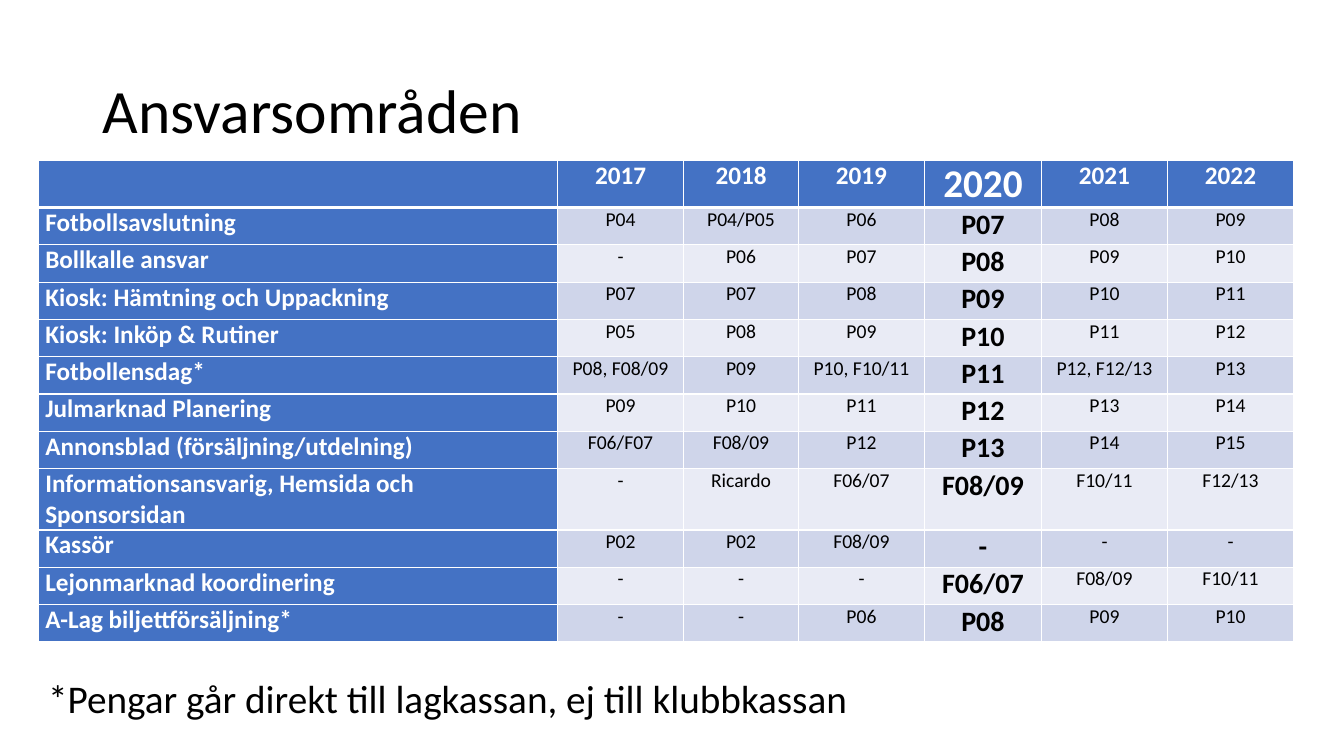
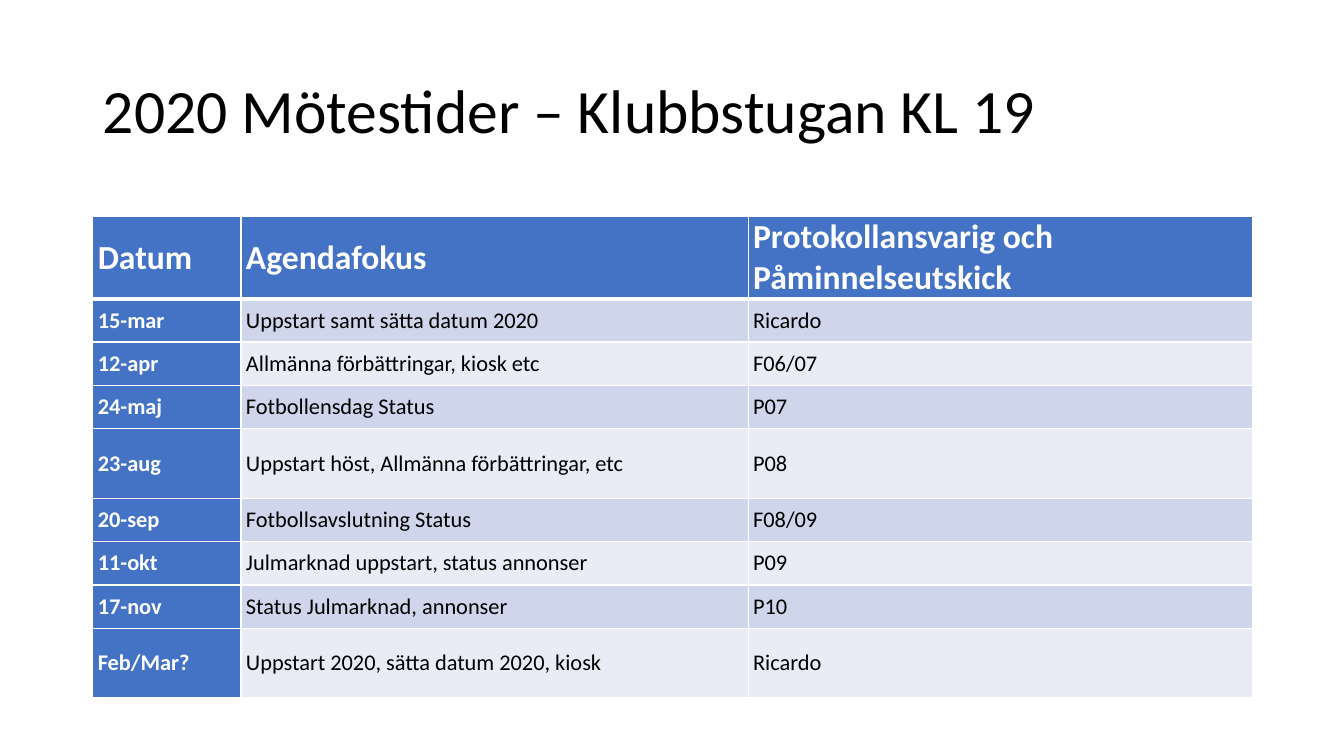
from dataclasses import dataclass

from lxml.etree import SubElement
from pptx import Presentation
from pptx.dml.color import RGBColor
from pptx.enum.text import MSO_ANCHOR, MSO_AUTO_SIZE, PP_ALIGN
from pptx.oxml.ns import qn
from pptx.util import Inches, Pt


@dataclass(frozen=True)
class Theme:
    font: str = "Calibri"
    text: str = "000000"
    inverse: str = "FFFFFF"
    accent: str = "4472C4"
    bands: tuple = ("CFD5EA", "E9EBF5")
    title_size: int = 44
    note_size: int = 28
    rule: float = 1
    header_rule: float = 3


@dataclass(frozen=True)
class TableStyle:
    header_size: int
    label_size: int
    body_size: int
    inset: float
    anchor: MSO_ANCHOR
    align: PP_ALIGN
    highlight_column: int = -1
    highlight_header_size: int = 28
    highlight_size: int = 20


THEME = Theme()

# Responsibilities per year
DUTIES_STYLE = TableStyle(18, 18, 14, 0.07, MSO_ANCHOR.TOP, PP_ALIGN.CENTER,
                          highlight_column=4)
DUTY_COLUMNS = [5.15, 1.25, 1.14, 1.25, 1.16, 1.25, 1.25]
DUTY_HEIGHTS = [0.47] + [0.37] * 7 + [0.61] + [0.37] * 3
DUTIES = [
    ["", "2017", "2018", "2019", "2020", "2021", "2022"],
    ["Fotbollsavslutning", "P04", "P04/P05", "P06", "P07", "P08", "P09"],
    ["Bollkalle ansvar", "-", "P06", "P07", "P08", "P09", "P10"],
    ["Kiosk: Hämtning och Uppackning", "P07", "P07", "P08", "P09", "P10", "P11"],
    ["Kiosk: Inköp & Rutiner", "P05", "P08", "P09", "P10", "P11", "P12"],
    ["Fotbollensdag*", "P08, F08/09", "P09", "P10, F10/11", "P11",
     "P12, F12/13", "P13"],
    ["Julmarknad Planering", "P09", "P10", "P11", "P12", "P13", "P14"],
    ["Annonsblad (försäljning/utdelning)", "F06/F07", "F08/09", "P12", "P13",
     "P14", "P15"],
    ["Informationsansvarig, Hemsida och Sponsorsidan", "-", "Ricardo",
     "F06/07", "F08/09", "F10/11", "F12/13"],
    ["Kassör", "P02", "P02", "F08/09", "-", "-", "-"],
    ["Lejonmarknad koordinering", "-", "-", "-", "F06/07", "F08/09", "F10/11"],
    ["A-Lag biljettförsäljning*", "-", "-", "P06", "P08", "P09", "P10"],
]

# Meeting schedule
MEETINGS_STYLE = TableStyle(24, 16, 16, 0.05, MSO_ANCHOR.MIDDLE, PP_ALIGN.LEFT)
MEETING_COLUMNS = [1.47, 5.03, 5]
MEETING_HEIGHTS = [0.81] + ([0.43] * 3 + [0.69]) * 2
MEETINGS = [
    ["Datum", "Agendafokus", "Protokollansvarig och Påminnelseutskick"],
    ["15-mar", "Uppstart samt sätta datum 2020", "Ricardo"],
    ["12-apr", "Allmänna förbättringar, kiosk etc", "F06/07"],
    ["24-maj", "Fotbollensdag Status", "P07"],
    ["23-aug", "Uppstart höst, Allmänna förbättringar, etc", "P08"],
    ["20-sep", "Fotbollsavslutning Status", "F08/09"],
    ["11-okt", "Julmarknad uppstart, status annonser", "P09"],
    ["17-nov", "Status Julmarknad, annonser", "P10"],
    ["Feb/Mar?", "Uppstart 2020, sätta datum 2020, kiosk", "Ricardo"],
]


def write(frame, text, *, size, color=THEME.text, bold=False,
          align=PP_ALIGN.LEFT, spacing=None):
    """Put one formatted paragraph in a text frame."""
    paragraph = frame.paragraphs[0]
    paragraph.alignment = align
    paragraph.line_spacing = spacing
    paragraph.font.size = Pt(size)
    if not text:
        return
    run = paragraph.add_run()
    run.text = text
    run.font.name = THEME.font
    run.font.size = Pt(size)
    run.font.bold = bold
    run.font.color.rgb = RGBColor.from_string(color)


def add_titled_slide(deck, text):
    slide = deck.slides.add_slide(deck.slide_layouts[5])
    title = slide.shapes.title
    title.left, title.top = Inches(0.92), Inches(0.4)
    title.width, title.height = Inches(11.5), Inches(1.45)
    frame = title.text_frame
    frame.auto_size = MSO_AUTO_SIZE.NONE
    frame.vertical_anchor = MSO_ANCHOR.MIDDLE
    write(frame, text, size=THEME.title_size, spacing=0.9)
    return slide


def add_note(slide, text, left, top, width, height):
    note = slide.shapes.add_textbox(Inches(left), Inches(top),
                                    Inches(width), Inches(height))
    note.text_frame.word_wrap = True
    write(note.text_frame, text, size=THEME.note_size, spacing=0.9)


def set_borders(cell, top, bottom):
    properties = cell._tc.get_or_add_tcPr()
    widths = {"a:lnL": THEME.rule, "a:lnR": THEME.rule,
              "a:lnT": top, "a:lnB": bottom}
    for side, width in widths.items():
        line = SubElement(properties, qn(side), w=str(Pt(width)))
        fill = SubElement(line, qn("a:solidFill"))
        SubElement(fill, qn("a:srgbClr"), val=THEME.inverse)


def format_cell(cell, text, row, column, style):
    is_header, is_label = row == 0, column == 0
    is_highlight = column == style.highlight_column
    on_accent = is_header or is_label
    if is_header:
        size = style.highlight_header_size if is_highlight else style.header_size
    elif is_label:
        size = style.label_size
    else:
        size = style.highlight_size if is_highlight else style.body_size

    set_borders(cell,
                top=THEME.header_rule if row == 1 else THEME.rule,
                bottom=THEME.header_rule if is_header else THEME.rule)
    cell.fill.solid()
    cell.fill.fore_color.rgb = RGBColor.from_string(
        THEME.accent if on_accent else THEME.bands[(row - 1) % 2])
    cell.margin_left = cell.margin_right = Inches(style.inset)
    cell.margin_top = cell.margin_bottom = 0
    cell.vertical_anchor = style.anchor
    write(cell.text_frame, text, size=size,
          color=THEME.inverse if on_accent else THEME.text,
          bold=on_accent or is_highlight,
          align=PP_ALIGN.LEFT if is_label else style.align)


def add_grid(slide, rows, left, top, widths, heights, style):
    table = slide.shapes.add_table(
        len(rows), len(widths), Inches(left), Inches(top),
        Inches(sum(widths)), Inches(sum(heights))).table
    table.horz_banding = False
    for column, width in zip(table.columns, widths):
        column.width = Inches(width)
    for table_row, height in zip(table.rows, heights):
        table_row.height = Inches(height)
    for row, texts in enumerate(rows):
        for column, text in enumerate(texts):
            format_cell(table.cell(row, column), text, row, column, style)


def main():
    deck = Presentation()
    deck.slide_width, deck.slide_height = Inches(13.33), Inches(7.5)

    # Responsibilities
    duties = add_titled_slide(deck, "Ansvarsområden")
    add_note(duties, "*Pengar går direkt till lagkassan, ej till klubbkassan",
             0.38, 6.69, 11.5, 0.58)
    add_grid(duties, DUTIES, 0.38, 1.59, DUTY_COLUMNS, DUTY_HEIGHTS, DUTIES_STYLE)

    # Meetings
    meetings = add_titled_slide(deck, "2020 Mötestider – Klubbstugan KL 19")
    add_grid(meetings, MEETINGS, 0.92, 2.15, MEETING_COLUMNS, MEETING_HEIGHTS,
             MEETINGS_STYLE)

    deck.save("out.pptx")


if __name__ == "__main__":
    main()
